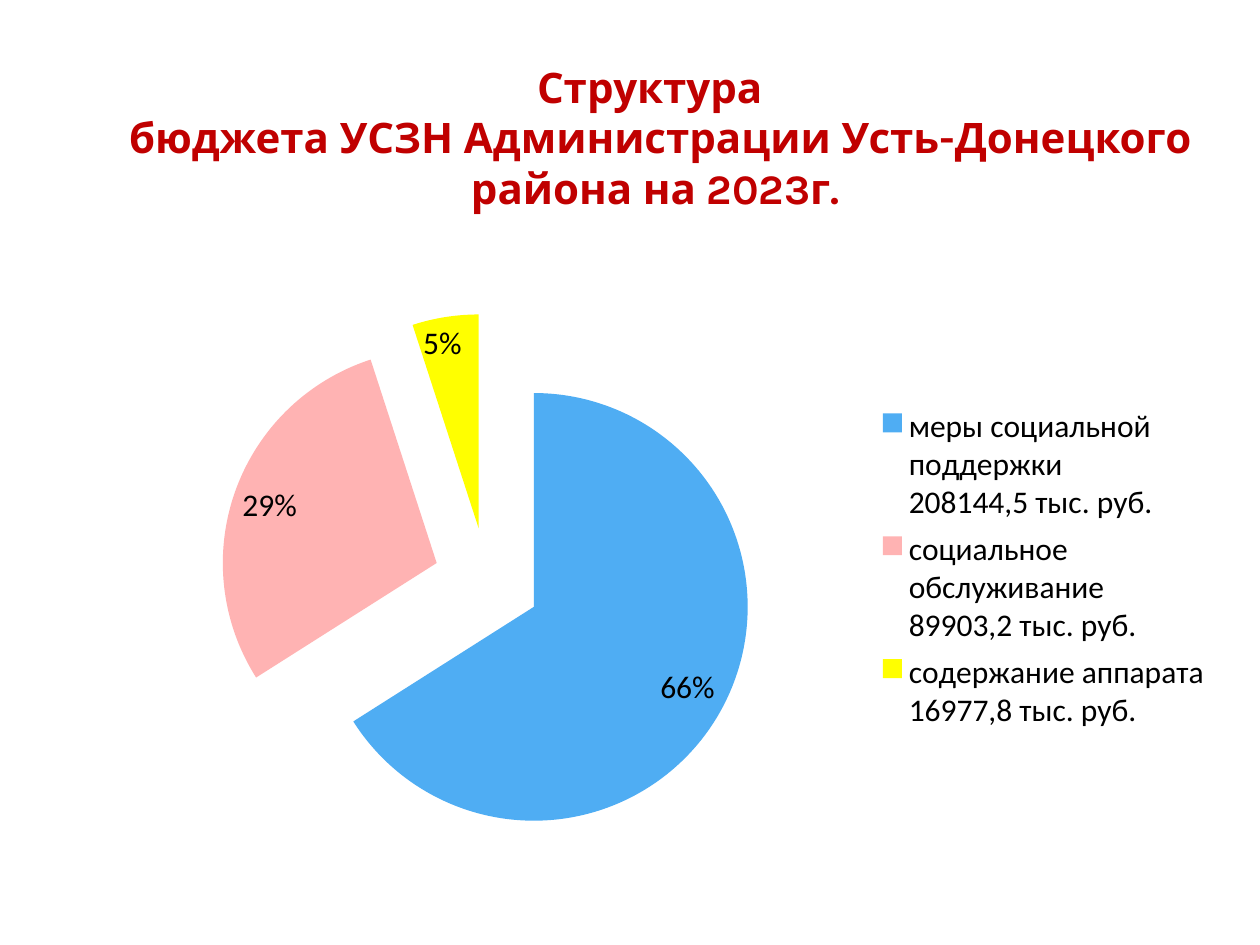
"""Build a budget structure slide with an exploded pie chart."""
from dataclasses import dataclass

import pptx
import pptx.chart.data
import pptx.dml.color
import pptx.enum.chart
import pptx.enum.text
import pptx.oxml
import pptx.oxml.ns
import pptx.util


@dataclass(frozen=True)
class Theme:
    """Colours, fonts and type sizes of the slide."""
    title_font: str = "Karla"
    body_font: str = "Calibri"
    title_size: int = 24
    body_size: int = 18
    title_color: str = "C00000"
    text_color: str = "000000"
    slices: tuple = ("4FADF3", "FFB3B3", "FFFF00")


THEME = Theme()
WIDTH, HEIGHT = 10, 7.5
TITLE = "Структура \v бюджета УСЗН Администрации Усть-Донецкого района на 2023г."
SHARES = {
    "меры социальной поддержки\n208144,5 тыс. руб.": 66,
    "социальное обслуживание\n89903,2 тыс. руб.": 29,
    "содержание аппарата\n16977,8 тыс. руб.": 5,
}
LABEL_SHIFTS = {1: (0, -0.01), 2: (-0.02, 0)}


def box(x, y, w, h):
    """Turn shares of the slide into lengths."""
    sizes = (WIDTH, HEIGHT, WIDTH, HEIGHT)
    return [pptx.util.Inches(n * size) for n, size in zip((x, y, w, h), sizes)]


def apply(obj, **values):
    """Set several attributes on an object."""
    for name, value in values.items():
        setattr(obj, name, value)


def style_font(font, name, size, color, bold=False):
    """Format a font."""
    apply(font, name=name, size=pptx.util.Pt(size), bold=bold)
    font.color.rgb = pptx.dml.color.RGBColor.from_string(color)


def paint(fill, color):
    """Give a fill one solid colour."""
    fill.solid()
    fill.fore_color.rgb = pptx.dml.color.RGBColor.from_string(color)


def chart_xml(tag, body="", attrs=""):
    """Make a chart element from its tag, content and attributes."""
    return pptx.oxml.parse_xml(
        f'<c:{tag} {pptx.oxml.ns.nsdecls("c")} {attrs}>{body}</c:{tag}>')


def value_tags(**values):
    """Write chart tags that each hold one value."""
    return "".join(f'<c:{tag} val="{val}"/>' for tag, val in values.items())


def chart_layout(x, y, w, h, **target):
    """Make a manual layout element in shares of the chart."""
    tags = value_tags(**target, xMode="edge", yMode="edge", x=x, y=y, w=w, h=h)
    return chart_xml("layout", f"<c:manualLayout>{tags}</c:manualLayout>")


def add_title(s):
    """Fill and format the title placeholder."""
    sp = s.shapes.title
    left, top, width, height = box(0.05, 0.04, 0.94, 0.21)
    apply(sp, left=left, top=top, width=width, height=height)
    tf = sp.text_frame
    tf.text = TITLE
    apply(tf, word_wrap=True, vertical_anchor=pptx.enum.text.MSO_ANCHOR.MIDDLE,
          auto_size=pptx.enum.text.MSO_AUTO_SIZE.NONE)
    p = tf.paragraphs[0]
    p.alignment = pptx.enum.text.PP_ALIGN.CENTER
    for r in p.runs:
        style_font(r.font, THEME.title_font, THEME.title_size, THEME.title_color, True)


def style_slices(series):
    """Colour the slices and pull them apart."""
    paint(series.format.fill, THEME.slices[0])
    for i, color in enumerate(THEME.slices):
        paint(series.points[i].format.fill, color)
    series._element.find(pptx.oxml.ns.qn("c:spPr")).addnext(
        chart_xml("explosion", attrs='val="25"'))


def style_labels(series):
    """Show percentages and nudge the labels of the small slices."""
    labels = series.data_labels
    apply(labels, show_percentage=True, show_value=False,
          number_format="0%", number_format_is_linked=False,
          position=pptx.enum.chart.XL_LABEL_POSITION.INSIDE_END)
    style_font(labels.font, THEME.body_font, THEME.body_size, THEME.text_color)
    for place, (i, (x, y)) in enumerate(LABEL_SHIFTS.items()):
        shift = f"<c:layout><c:manualLayout>{value_tags(x=x, y=y)}</c:manualLayout></c:layout>"
        number = '<c:numFmt formatCode="0%" sourceLinked="0"/>'
        shown = value_tags(dLblPos="inEnd", showLegendKey=0, showVal=0, showCatName=0,
                           showSerName=0, showPercent=1, showBubbleSize=0)
        labels._element.insert(
            place, chart_xml("dLbl", value_tags(idx=i) + shift + number + shown))


def add_pie(s):
    """Add the pie of budget shares with its legend."""
    data = pptx.chart.data.CategoryChartData()
    data.categories = list(SHARES)
    data.add_series("Структура бюджета", SHARES.values())
    chart = s.shapes.add_chart(pptx.enum.chart.XL_CHART_TYPE.PIE,
                               *box(0.06, 0.27, 0.92, 0.69), data).chart
    apply(chart, has_title=False, has_legend=True)
    style_font(chart.font, THEME.body_font, THEME.body_size, THEME.text_color)
    apply(chart.legend, position=pptx.enum.chart.XL_LEGEND_POSITION.RIGHT,
          include_in_layout=False)
    chart.legend._element.find(pptx.oxml.ns.qn("c:legendPos")).addnext(
        chart_layout(0.68, 0.22, 0.31, 0.52))
    plot = chart.plots[0]
    plot.vary_by_categories = True
    style_slices(plot.series[0])
    style_labels(plot.series[0])
    area = plot._element.getparent()
    for old in area.findall(pptx.oxml.ns.qn("c:layout")):
        area.remove(old)
    area.insert(0, chart_layout(0.07, 0.09, 0.57, 0.82, layoutTarget="inner"))


def main():
    """Build and save the presentation."""
    prs = pptx.Presentation()
    apply(prs, slide_width=pptx.util.Inches(WIDTH),
          slide_height=pptx.util.Inches(HEIGHT))
    s = prs.slides.add_slide(prs.slide_layouts[5])
    add_title(s)
    add_pie(s)
    prs.save("out.pptx")


if __name__ == "__main__":
    main()
